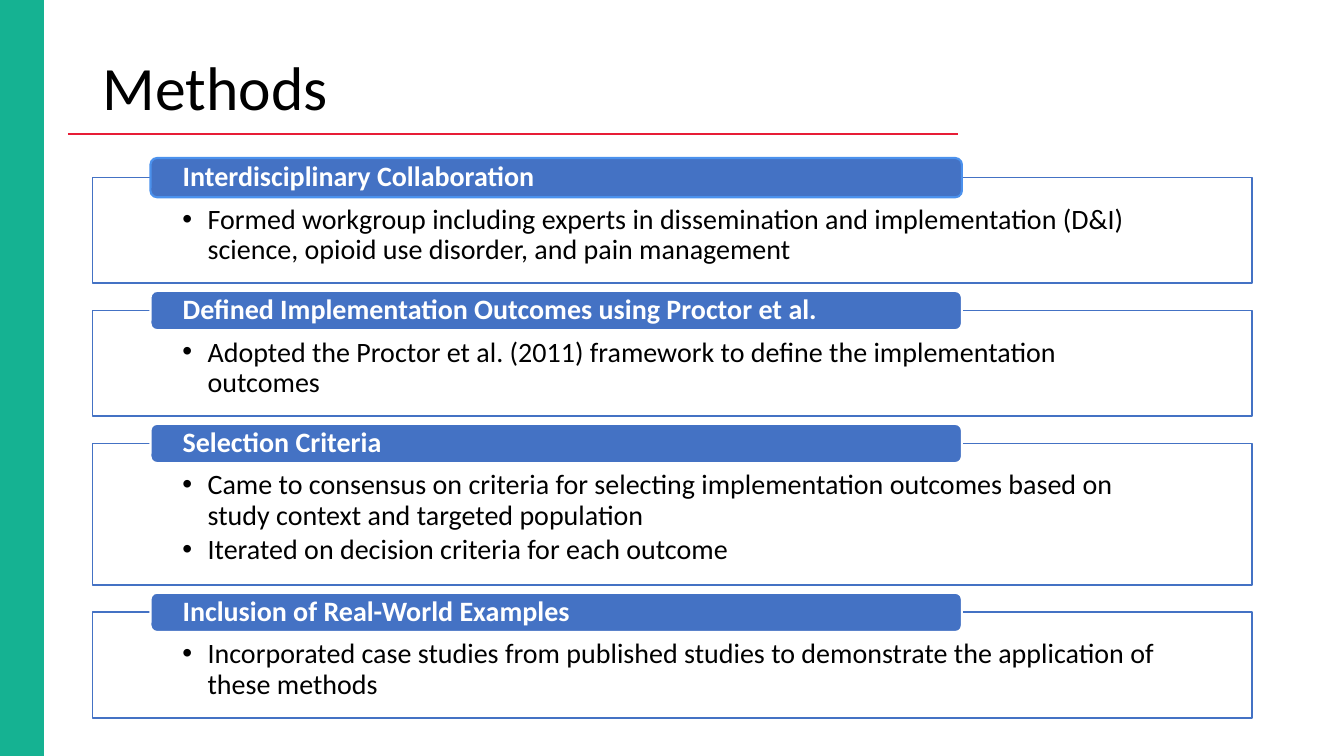
from lxml.etree import SubElement
from pptx import Presentation
from pptx.dml.color import RGBColor
from pptx.enum.shapes import MSO_CONNECTOR, MSO_SHAPE
from pptx.enum.text import MSO_ANCHOR, PP_ALIGN
from pptx.oxml.ns import qn
from pptx.util import Pt

COLORS = {
    "band": "15B292",
    "rule": "E71D36",
    "blue": "4472C4",
    "bright_blue": "4B91ED",
    "white": "FFFFFF",
    "black": "000000",
}

METHODS = [
    ("Interdisciplinary Collaboration", "bright_blue", [
        "Formed workgroup including experts in dissemination and implementation (D&I) "
        "science, opioid use disorder, and pain management"]),
    ("Defined Implementation Outcomes using Proctor et al.", "white", [
        "Adopted the Proctor et al. (2011) framework to define the implementation outcomes"]),
    ("Selection Criteria", "white", [
        "Came to consensus on criteria for selecting implementation outcomes based on "
        "study context and targeted population",
        "Iterated on decision criteria for each outcome"]),
    ("Inclusion of Real-World Examples", "white", [
        "Incorporated case studies from published studies to demonstrate the application "
        "of these methods"]),
]

FIRST_TOP = 126.7
ONE_BULLET_HEIGHT = 75.6
EXTRA_BULLET_HEIGHT = 25.7
GAP = 19.35
HEADING_RISE = 13.8


def rgb(name):
    return RGBColor.from_string(COLORS[name])


def add_box(slide, kind, bounds, fill, line, line_width):
    box = slide.shapes.add_shape(kind, *map(Pt, bounds))
    box.shadow.inherit = False
    box.fill.solid()
    box.fill.fore_color.rgb = rgb(fill)
    box.line.color.rgb = rgb(line)
    box.line.width = Pt(line_width)
    return box


def add_rule(slide, left, right, top):
    rule = slide.shapes.add_connector(
        MSO_CONNECTOR.STRAIGHT, Pt(left), Pt(top), Pt(right), Pt(top))
    rule.line.color.rgb = rgb("rule")
    rule.line.width = Pt(1.5)
    SubElement(rule._element.spPr, qn("a:effectLst"))


def add_bullet(paragraph):
    properties = paragraph._p.get_or_add_pPr()
    properties.set("marL", str(Pt(18)))
    properties.set("indent", str(-Pt(18)))
    SubElement(properties, qn("a:buFont"), typeface="Arial")
    SubElement(properties, qn("a:buChar"), char="•")


def write(shape, lines, color, size, insets, anchor, bold=False, bulleted=False):
    """Fill a shape with left-aligned paragraphs; insets run left, top, right, bottom."""
    frame = shape.text_frame
    frame.word_wrap = True
    frame.vertical_anchor = anchor
    for side, inset in zip(("left", "top", "right", "bottom"), insets):
        setattr(frame, f"margin_{side}", Pt(inset))
    for index, line in enumerate(lines):
        paragraph = frame.add_paragraph() if index else frame.paragraphs[0]
        paragraph.text = line
        paragraph.alignment = PP_ALIGN.LEFT
        paragraph.line_spacing = 0.9
        if bulleted:
            paragraph.space_after = Pt(3)
            add_bullet(paragraph)
        font_format = {"name": "Calibri", "size": Pt(size), "bold": bold}
        for attribute, value in font_format.items():
            setattr(paragraph.font, attribute, value)
        paragraph.font.color.rgb = rgb(color)


def add_method(slide, top, height, heading, outline, bullets):
    """Draw a bulleted panel with its heading tab across the top edge."""
    panel = add_box(slide, MSO_SHAPE.RECTANGLE, (66.24, top, 828, height),
                    "white", "blue", 1)
    fill_color = panel._element.spPr.find(qn("a:solidFill"))[0]
    SubElement(fill_color, qn("a:alpha"), val="90000")
    write(panel, bullets, "black", 20, (64.1, 19.7, 64.1, 11.5),
          MSO_ANCHOR.TOP, bulleted=True)

    tab = add_box(slide, MSO_SHAPE.ROUNDED_RECTANGLE,
                  (107.5, top - HEADING_RISE, 579.6, 28), "blue", outline, 1.5)
    write(tab, [heading], "white", 20, (21.6, 0, 21.6, 0),
          MSO_ANCHOR.MIDDLE, bold=True)


def main():
    deck = Presentation()
    deck.slide_width, deck.slide_height = Pt(960), Pt(540)
    slide = deck.slides.add_slide(deck.slide_layouts[6])

    add_box(slide, MSO_SHAPE.RECTANGLE, (0, 0, 31, 540), "band", "band", 1)
    add_rule(slide, 48.5, 684.5, 95.6)
    title = slide.shapes.add_textbox(Pt(66.24), Pt(33.8), Pt(828), Pt(62))
    write(title, ["Methods"], "black", 44, (7.2, 3.6, 7.2, 3.6), MSO_ANCHOR.MIDDLE)

    top = FIRST_TOP
    for heading, outline, bullets in METHODS:
        height = ONE_BULLET_HEIGHT + EXTRA_BULLET_HEIGHT * (len(bullets) - 1)
        add_method(slide, top, height, heading, outline, bullets)
        top += height + GAP

    deck.save("out.pptx")


if __name__ == "__main__":
    main()
